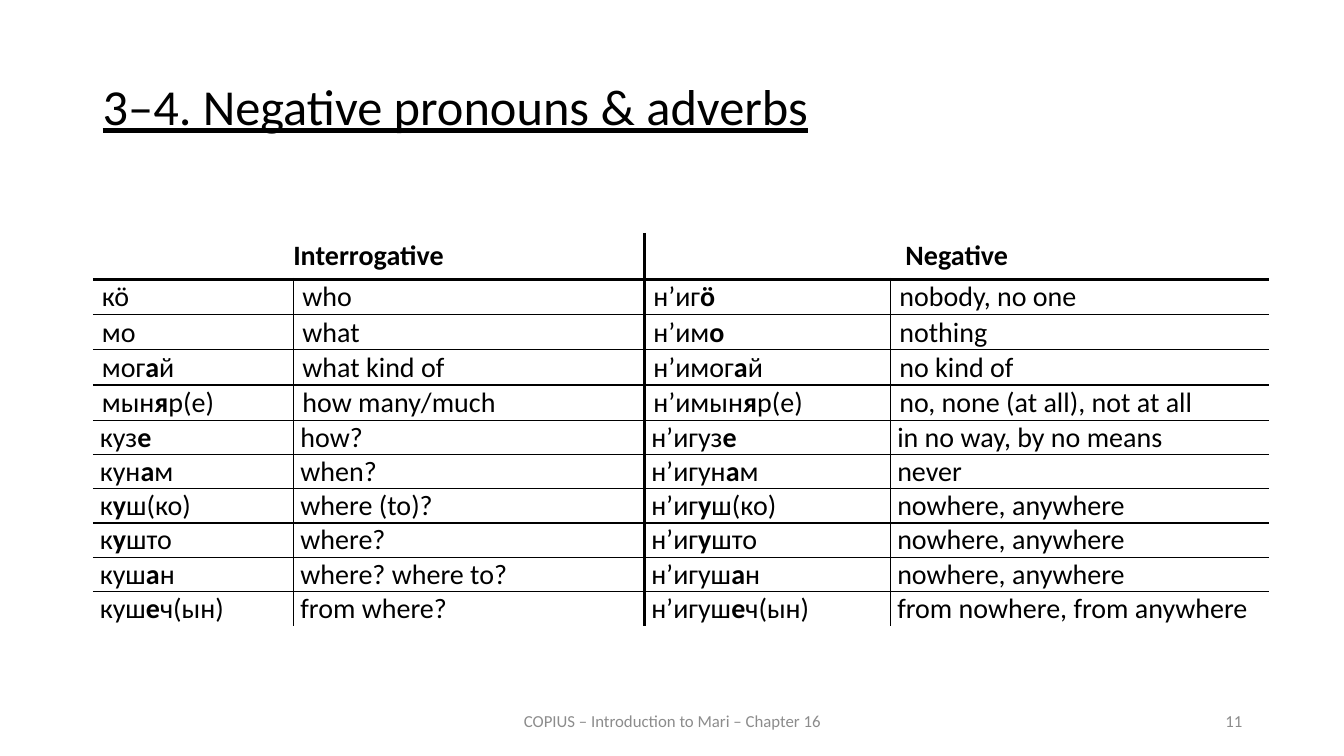
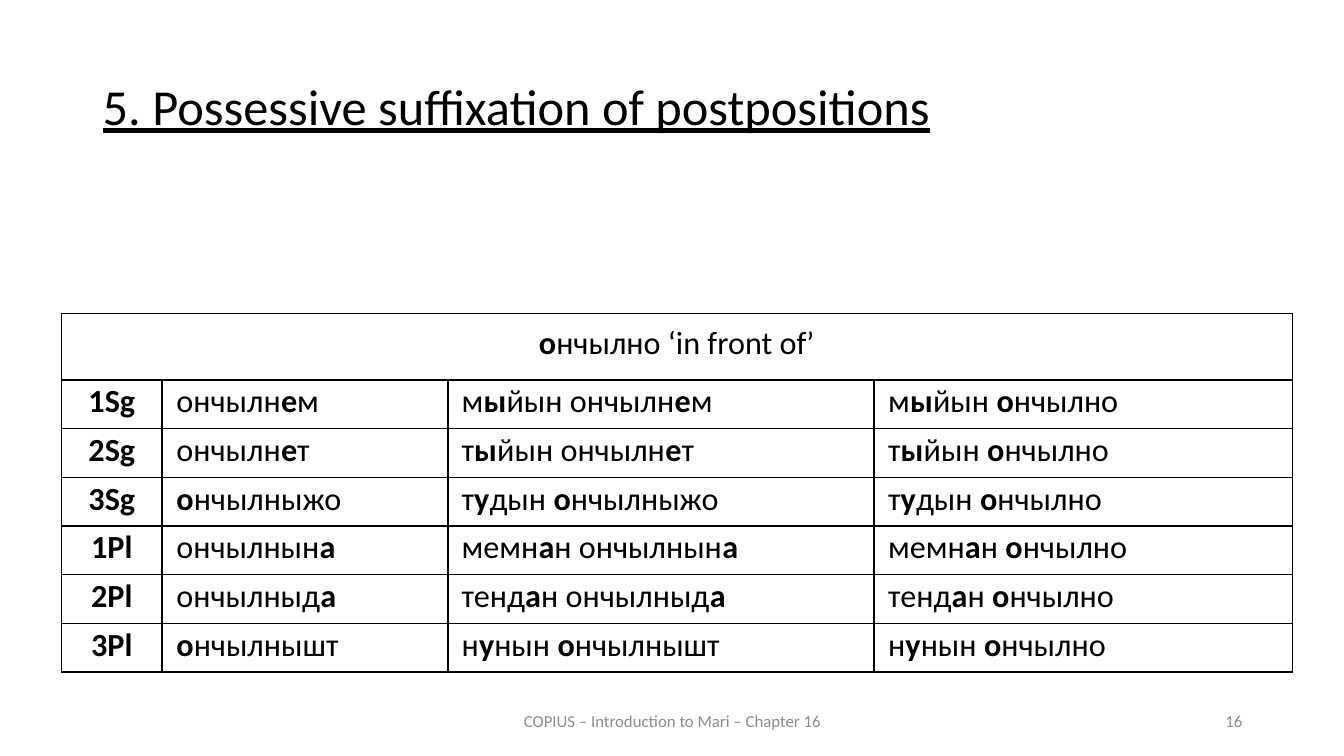
from dataclasses import dataclass

from lxml import etree
from pptx import Presentation
from pptx.dml.color import RGBColor
from pptx.enum.text import MSO_ANCHOR, PP_ALIGN
from pptx.oxml.ns import qn
from pptx.util import Inches, Pt

LEFT, CENTER, RIGHT, JUSTIFY = PP_ALIGN.LEFT, PP_ALIGN.CENTER, PP_ALIGN.RIGHT, PP_ALIGN.JUSTIFY
TOP, MIDDLE = MSO_ANCHOR.TOP, MSO_ANCHOR.MIDDLE


@dataclass(frozen=True)
class Theme:
    font: str = "Calibri"
    ink: str = "000000"
    muted: str = "8C8C8C"
    title: int = 36
    footer: int = 12
    pronouns: int = 20
    possessives: int = 23


THEME = Theme()
FOOTER = "COPIUS – Introduction to Mari – Chapter 16"

# Asterisks enclose stressed vowels and bold headings.
PRONOUNS = [
    ("*Interrogative*", "", "*Negative*", ""),
    ("кӧ", "who", "н’иг*ӧ*", "nobody, no one"),
    ("мо", "what", "н’им*о*", "nothing"),
    ("мог*а*й", "what kind of", "н’имог*а*й", "no kind of"),
    ("мын*я*р(е)", "how many/much", "н’имын*я*р(е)", "no, none (at all), not at all"),
    ("куз*е*", "how?", "н’игуз*е*", "in no way, by no means"),
    ("кун*а*м", "when?", "н’игун*а*м", "never"),
    ("к*у*ш(ко)", "where (to)?", "н’иг*у*ш(ко)", "nowhere, anywhere"),
    ("к*у*што", "where?", "н’иг*у*што", "nowhere, anywhere"),
    ("куш*а*н", "where? where to?", "н’игуш*а*н", "nowhere, anywhere"),
    ("куш*е*ч(ын)", "from where?", "н’игуш*е*ч(ын)", "from nowhere, from anywhere"),
]
POSSESSIVES = [
    ("*о*нчылно ‘in front of’", "", "", ""),
    ("*1Sg*", "ончылн*е*м", "м*ы*йын ончылн*е*м", "м*ы*йын *о*нчылно"),
    ("*2Sg*", "ончылн*е*т", "т*ы*йын ончылн*е*т", "т*ы*йын *о*нчылно"),
    ("*3Sg*", "*о*нчылныжо", "т*у*дын* о*нчылныжо", "т*у*дын* о*нчылно"),
    ("*1Pl*", "ончылнын*а*", "мемн*а*н ончылнын*а*", "мемн*а*н *о*нчылно"),
    ("*2Pl*", "ончылныд*а*", "тенд*а*н ончылныд*а*", "тенд*а*н *о*нчылно"),
    ("*3Pl*", "*о*нчылнышт", "н*у*нын* о*нчылнышт", "н*у*нын* о*нчылно"),
]

SLIDES = [
    dict(
        title="3–4. Negative pronouns & adverbs", number="11", rows=PRONOUNS,
        at=(0.92, 2.31), widths=[1.99, 3.48, 2.44, 3.76],
        heights=[0.46] + [0.35] * 4 + [0.34] * 6, header_span=2,
        column_lines=[0, 1, 2.25, 1, 0], row_lines=[0, 2.25] + [1] * 9 + [0],
        insets=[(0.12, 0.06, 0.06)] + [(0.09, 0.01, 0)] * 4 + [(0.07, 0, 0)] * 6,
        size=THEME.pronouns, aligns=[LEFT] * 4, anchor=MIDDLE,
    ),
    dict(
        title="5. Possessive suffixation of postpositions", number="16", rows=POSSESSIVES,
        at=(0.61, 3.11), widths=[1, 2.83, 4.23, 4.15],
        heights=[0.66] + [(3.56 - 0.66) / 6] * 6, header_span=4,
        column_lines=[1.5] * 5, row_lines=[1.5, 1.5] + [1] * 5 + [1.5],
        insets=[(0.19, 0.1, 0.1)] + [(0.14, 0.02, 0)] * 6,
        size=THEME.possessives, aligns=[CENTER] + [JUSTIFY] * 3, anchor=TOP,
    ),
]


def write(paragraph, text, size, color=THEME.ink, align=LEFT, underline=False):
    paragraph.alignment = align
    for index, part in enumerate(text.split("*")):
        if part:
            run = paragraph.add_run()
            run.text = part
            font = run.font
            font.name, font.size = THEME.font, Pt(size)
            font.bold, font.underline = index % 2 == 1, underline
            font.color.rgb = RGBColor.from_string(color)


def add_text(slide, box, text, size, anchor=MIDDLE, **style):
    frame = slide.shapes.add_textbox(*map(Inches, box)).text_frame
    frame.word_wrap, frame.vertical_anchor = True, anchor
    write(frame.paragraphs[0], text, size, **style)
    return frame.paragraphs[0]


def add_frame(slide, title, number):
    heading = add_text(slide, (0.92, 0.76, 11.5, 0.83), title, THEME.title,
                       anchor=TOP, align=JUSTIFY, underline=True)
    heading.line_spacing, heading.space_before = 0.9, Pt(12)
    for left, width, text, align in ((4.42, 4.5, FOOTER, CENTER), (9.42, 3, number, RIGHT)):
        add_text(slide, (left, 6.95, width, 0.4), text, THEME.footer,
                 color=THEME.muted, align=align)


def draw_borders(cell, widths):
    properties = cell._tc.get_or_add_tcPr()
    for side, width in zip("LRTB", widths):
        line = etree.SubElement(properties, qn(f"a:ln{side}"), w=str(Pt(width)))
        if width:
            fill = etree.SubElement(line, qn("a:solidFill"))
            etree.SubElement(fill, qn("a:srgbClr"), val=THEME.ink)
        else:
            etree.SubElement(line, qn("a:noFill"))


def add_word_table(slide, spec_):
    rows, widths, heights = spec_["rows"], spec_["widths"], spec_["heights"]
    box = (*spec_["at"], sum(widths), sum(heights))
    table = slide.shapes.add_table(len(rows), len(widths), *map(Inches, box)).table
    table.first_row = table.horz_banding = False
    for column, width in zip(table.columns, widths):
        column.width = Inches(width)
    for row, height in zip(table.rows, heights):
        row.height = Inches(height)
    span = spec_["header_span"]
    for first in range(0, len(widths), span):
        table.cell(0, first).merge(table.cell(0, first + span - 1))

    vertical, horizontal = spec_["column_lines"], spec_["row_lines"]
    for r, words in enumerate(rows):
        side, top, bottom = map(Inches, spec_["insets"][r])
        for c, word in enumerate(words):
            cell = table.cell(r, c)
            end = c + (cell.span_width if cell.is_merge_origin else 1)
            left_line = 0 if cell.is_spanned else vertical[c]
            draw_borders(cell, (left_line, vertical[end], horizontal[r], horizontal[r + 1]))
            cell.fill.background()
            cell.margin_left = cell.margin_right = side
            cell.margin_top, cell.margin_bottom = top, bottom
            cell.vertical_anchor = spec_["anchor"] if r else TOP
            write(cell.text_frame.paragraphs[0], word, spec_["size"],
                  align=spec_["aligns"][c] if r else CENTER)


def main():
    deck = Presentation()
    deck.slide_width, deck.slide_height = Inches(13.33), Inches(7.5)
    for content in SLIDES:
        slide = deck.slides.add_slide(deck.slide_layouts[6])
        add_frame(slide, content["title"], content["number"])
        add_word_table(slide, content)
    deck.save("out.pptx")


if __name__ == "__main__":
    main()
